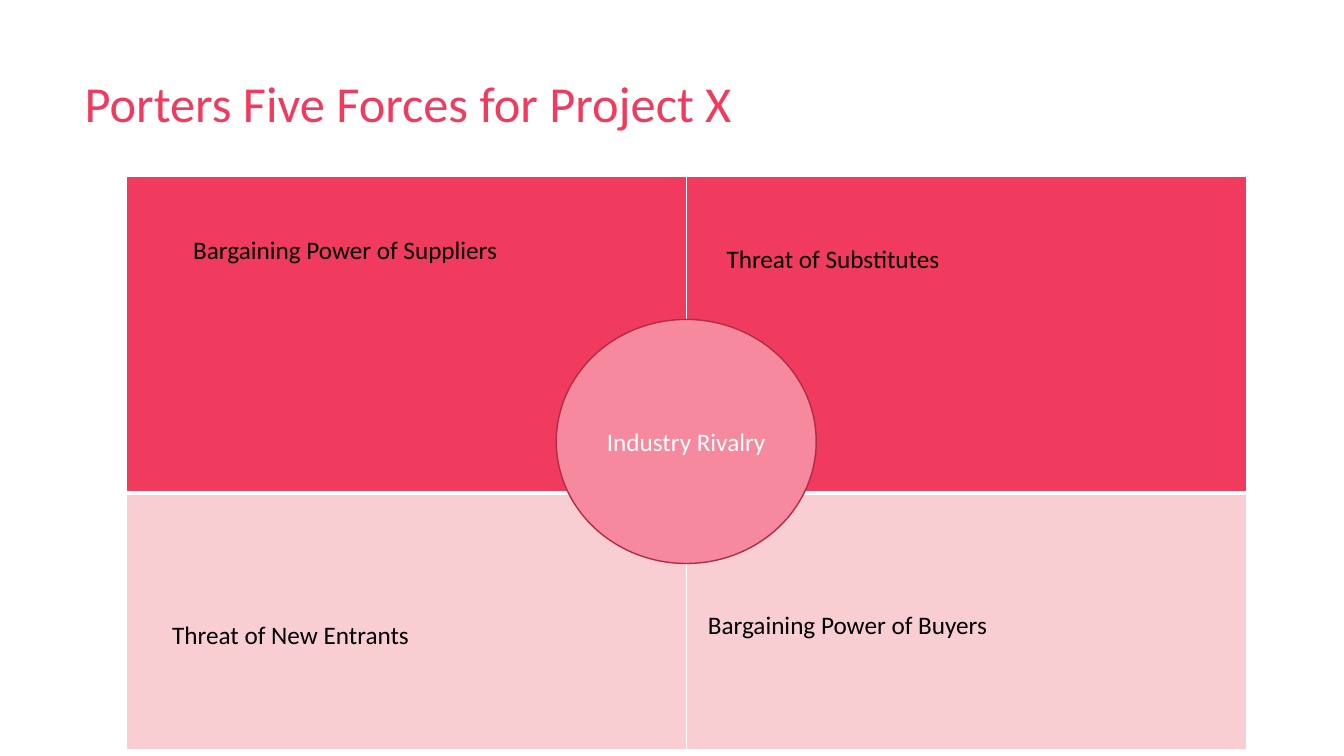
from pptx import Presentation
from pptx.dml.color import RGBColor
from pptx.enum.shapes import MSO_SHAPE
from pptx.enum.text import MSO_ANCHOR, MSO_AUTO_SIZE, PP_ALIGN
from pptx.oxml.ns import qn
from pptx.util import Cm, Pt
from lxml.etree import SubElement

ROSE = RGBColor(0xF0, 0x3B, 0x5E)
BLUSH = RGBColor(0xF9, 0xCE, 0xD2)
PINK = RGBColor(0xF6, 0x89, 0x9E)
WINE = RGBColor(0xB2, 0x2C, 0x46)
BLACK = RGBColor(0, 0, 0)
WHITE = RGBColor(0xFF, 0xFF, 0xFF)


class Board:
    font = "Calibri"
    size = 18

    def __init__(self, deck):
        self.slide = deck.slides.add_slide(deck.slide_layouts[5])
        self.shapes = self.slide.shapes

    def letter(self, shape, text, color, size=None, align=PP_ALIGN.LEFT,
               anchor=MSO_ANCHOR.TOP):
        frame = shape.text_frame
        frame.text = text
        frame.word_wrap = True
        frame.auto_size = MSO_AUTO_SIZE.NONE
        frame.vertical_anchor = anchor
        para = frame.paragraphs[0]
        para.alignment = align
        font = para.runs[0].font
        font.name = self.font
        font.size = Pt(size or self.size)
        font.color.rgb = color

    def title(self, text, left, top, width, height):
        shape = self.shapes.title
        shape.left, shape.top = Cm(left), Cm(top)
        shape.width, shape.height = Cm(width), Cm(height)
        self.letter(shape, text, ROSE, 36)

    def edge(self, cell, side, width):
        line = SubElement(cell._tc.get_or_add_tcPr(), qn("a:" + side),
                          w=str(Pt(width)))
        fill = SubElement(line, qn("a:solidFill"))
        SubElement(fill, qn("a:srgbClr"), val=str(WHITE))

    def grid(self, left, top, wide, rows):
        high = sum(height for height, _ in rows)
        table = self.shapes.add_table(len(rows), 2, Cm(left), Cm(top),
                                      Cm(2 * wide), Cm(high)).table
        table.first_row = False
        table.horz_banding = False
        for col in table.columns:
            col.width = Cm(wide)
        for num, (height, color) in enumerate(rows):
            table.rows[num].height = Cm(height)
            for cell in table.rows[num].cells:
                self.edge(cell, "lnL", 1)
                self.edge(cell, "lnR", 1)
                self.edge(cell, "lnT", 3 if num else 1)
                self.edge(cell, "lnB", 1 if num else 3)
                cell.fill.solid()
                cell.fill.fore_color.rgb = color

    def label(self, text, left, top, width):
        box = self.shapes.add_textbox(Cm(left), Cm(top), Cm(width), Cm(1.03))
        self.letter(box, text, BLACK)

    def oval(self, text, left, top, width, height):
        shape = self.shapes.add_shape(MSO_SHAPE.OVAL, Cm(left), Cm(top),
                                      Cm(width), Cm(height))
        shape.shadow.inherit = False
        shape.fill.solid()
        shape.fill.fore_color.rgb = PINK
        shape.line.color.rgb = WINE
        shape.line.width = Pt(1)
        self.letter(shape, text, WHITE, align=PP_ALIGN.CENTER,
                    anchor=MSO_ANCHOR.MIDDLE)


def main():
    deck = Presentation()
    deck.slide_width, deck.slide_height = Cm(33.87), Cm(19.05)
    board = Board(deck)
    board.title("Porters Five Forces for Project X", 1.88, 1.7, 23.88, 3.66)
    board.grid(3.18, 4.45, 14.12, [(7.98, ROSE), (6.45, BLUSH)])
    board.label("Bargaining Power of Suppliers", 4.62, 5.77, 9.2)
    board.label("Threat of Substitutes", 18.06, 6, 7.7)
    board.label("Threat of New Entrants", 4.09, 15.47, 8.92)
    board.label("Bargaining Power of Buyers", 17.59, 15.24, 8.17)
    board.oval("Industry Rivalry", 14.02, 8.05, 6.55, 6.15)
    deck.save("out.pptx")


if __name__ == "__main__":
    main()
